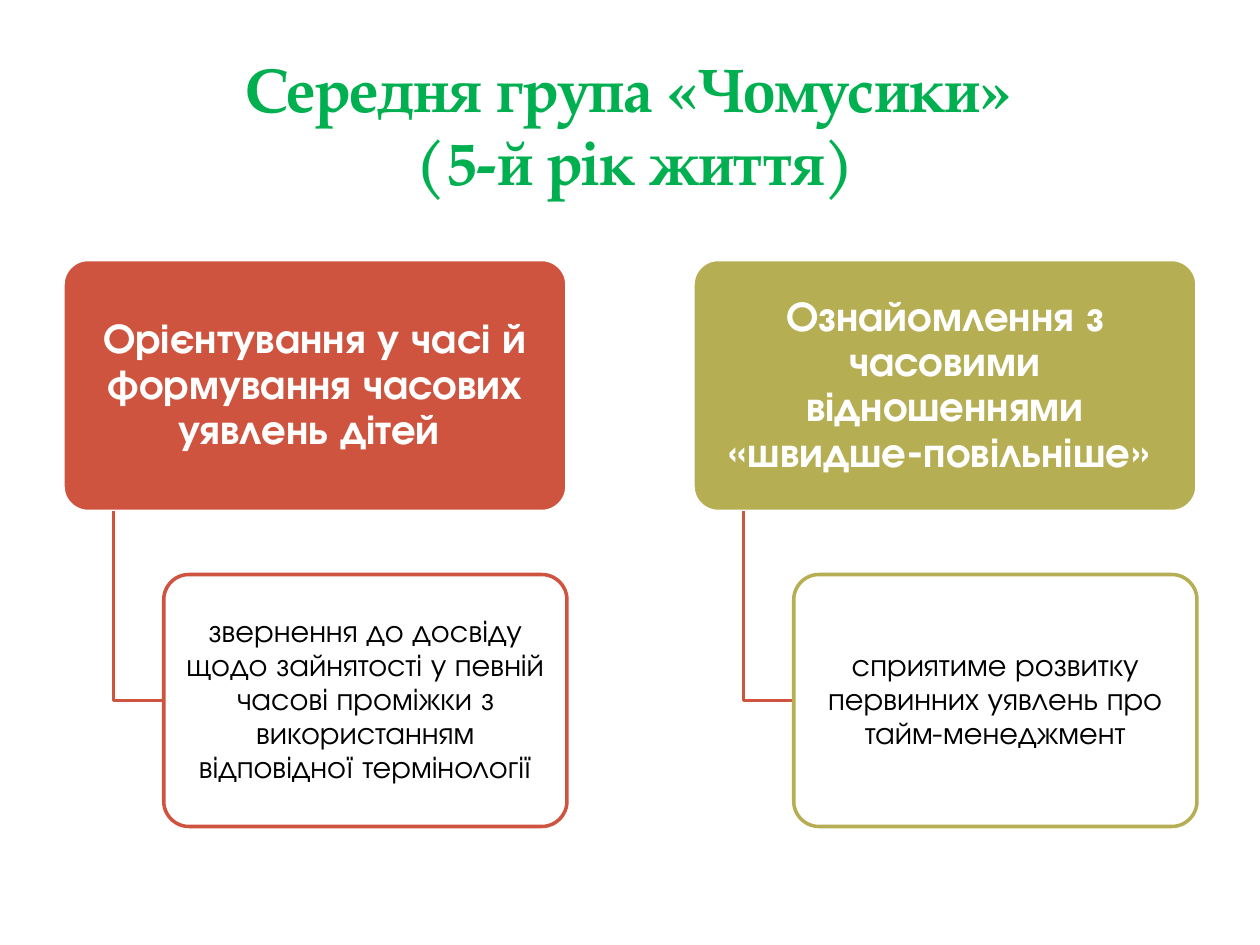
from dataclasses import dataclass
from typing import Any

import pptx
import pptx.dml.color
import pptx.enum.shapes
import pptx.enum.text
import pptx.util


@dataclass(frozen=True)
class Theme:
    title_font: str = "TeX Gyre Pagella"
    body_font: str = "TeX Gyre Adventor"
    title_size: int = 35
    heading_size: int = 24
    detail_size: int = 18
    line_width: int = 2
    green: str = "00B050"
    red: str = "CF543F"
    olive: str = "B5AE53"
    white: str = "FFFFFF"
    black: str = "000000"


@dataclass(frozen=True)
class Branch:
    heading: str
    detail: str
    color: str


@dataclass(frozen=True)
class Area:
    """A place on the grid, in columns and rows."""
    left: float
    top: float
    width: float
    height: float


THEME = Theme()
CELL = pptx.util.Inches(0.1)
COLUMNS, ROWS = 100, 75

# Branch layout in grid cells
FIRST_LEFT, BRANCH_STEP, BRANCH_TOP = 5, 50, 20.6
HEADING_WIDTH, BOX_HEIGHT, BOX_GAP = 40, 20, 5
STEM_INDENT, DETAIL_INDENT, DETAIL_WIDTH = 4, 8, 32
TEXT_MARGIN = 1.1

TITLE = "Середня група «Чомусики» \v(5-й рік життя)"
BRANCHES = [
    Branch(
        "Орієнтування у часі й формування часових уявлень дітей ",
        "звернення до досвіду щодо зайнятості у певній часові проміжки "
        "з використанням відповідної термінології",
        THEME.red,
    ),
    Branch(
        "Ознайомлення з часовими відношеннями «швидше-повільніше» ",
        "сприятиме розвитку первинних уявлень про тайм-менеджмент",
        THEME.olive,
    ),
]


def cells(count: float) -> int:
    return round(count * CELL)


def place(area: Area) -> tuple[int, ...]:
    return tuple(map(cells, (area.left, area.top, area.width, area.height)))


def rgb(color: str) -> Any:
    return pptx.dml.color.RGBColor.from_string(color)


def set_values(target: Any, values: dict[str, Any]) -> None:
    for name, value in values.items():
        setattr(target, name, value)


def set_line(shape: Any, color: str) -> None:
    shape.shadow.inherit = False
    shape.line.color.rgb = rgb(color)
    shape.line.width = pptx.util.Pt(THEME.line_width)


def write(shape: Any, text: str, font: dict[str, Any], color: str,
          margin: float, spacing: float) -> None:
    frame = shape.text_frame
    set_values(frame, {
        "word_wrap": True,
        "vertical_anchor": pptx.enum.text.MSO_ANCHOR.MIDDLE,
        "margin_left": cells(margin),
        "margin_right": cells(margin),
        "margin_top": cells(margin),
        "margin_bottom": cells(margin),
    })
    paragraph = frame.paragraphs[0]
    paragraph.text = text
    set_values(paragraph, {
        "alignment": pptx.enum.text.PP_ALIGN.CENTER,
        "line_spacing": spacing,
    })
    set_values(paragraph.font, font)
    paragraph.font.color.rgb = rgb(color)


def draw_box(slide: Any, area: Area, text: str, font: dict[str, Any],
             text_color: str, fill: str, line: str) -> None:
    shape = slide.shapes.add_shape(
        pptx.enum.shapes.MSO_SHAPE.ROUNDED_RECTANGLE, *place(area))
    shape.adjustments[0] = 0.1
    shape.fill.solid()
    shape.fill.fore_color.rgb = rgb(fill)
    set_line(shape, line)
    write(shape, text, font, text_color, TEXT_MARGIN, 0.9)


def draw_stem(slide: Any, left: float, top: float,
              right: float, bottom: float) -> None:
    builder = slide.shapes.build_freeform(cells(left), cells(top))
    builder.add_line_segments(
        [(cells(left), cells(bottom)), (cells(right), cells(bottom))],
        close=False)
    stem = builder.convert_to_shape()
    stem.fill.background()
    set_line(stem, THEME.red)


def draw_branch(slide: Any, branch: Branch, left: float) -> None:
    heading = Area(left, BRANCH_TOP, HEADING_WIDTH, BOX_HEIGHT)
    heading_bottom = BRANCH_TOP + BOX_HEIGHT
    detail = Area(left + DETAIL_INDENT, heading_bottom + BOX_GAP,
                  DETAIL_WIDTH, BOX_HEIGHT)
    heading_font = {"name": THEME.body_font, "bold": True,
                    "size": pptx.util.Pt(THEME.heading_size)}
    detail_font = {"name": THEME.body_font, "bold": False,
                   "size": pptx.util.Pt(THEME.detail_size)}

    draw_box(slide, heading, branch.heading, heading_font,
             THEME.white, branch.color, THEME.white)
    draw_stem(slide, left + STEM_INDENT, heading_bottom,
              detail.left, detail.top + BOX_HEIGHT / 2)
    draw_box(slide, detail, branch.detail, detail_font,
             THEME.black, THEME.white, branch.color)


def main() -> None:
    presentation = pptx.Presentation()
    set_values(presentation, {"slide_width": cells(COLUMNS),
                              "slide_height": cells(ROWS)})
    slide = presentation.slides.add_slide(presentation.slide_layouts[6])

    # Title
    title = slide.shapes.add_textbox(*place(Area(10.3, -1.9, 80.3, 23.6)))
    title_font = {"name": THEME.title_font, "bold": True,
                  "size": pptx.util.Pt(THEME.title_size)}
    write(title, TITLE, title_font, THEME.green, 0.5, 1.0)

    # Two branches: heading, stem and detail
    for index, branch in enumerate(BRANCHES):
        draw_branch(slide, branch, FIRST_LEFT + index * BRANCH_STEP)

    presentation.save("out.pptx")


if __name__ == "__main__":
    main()
